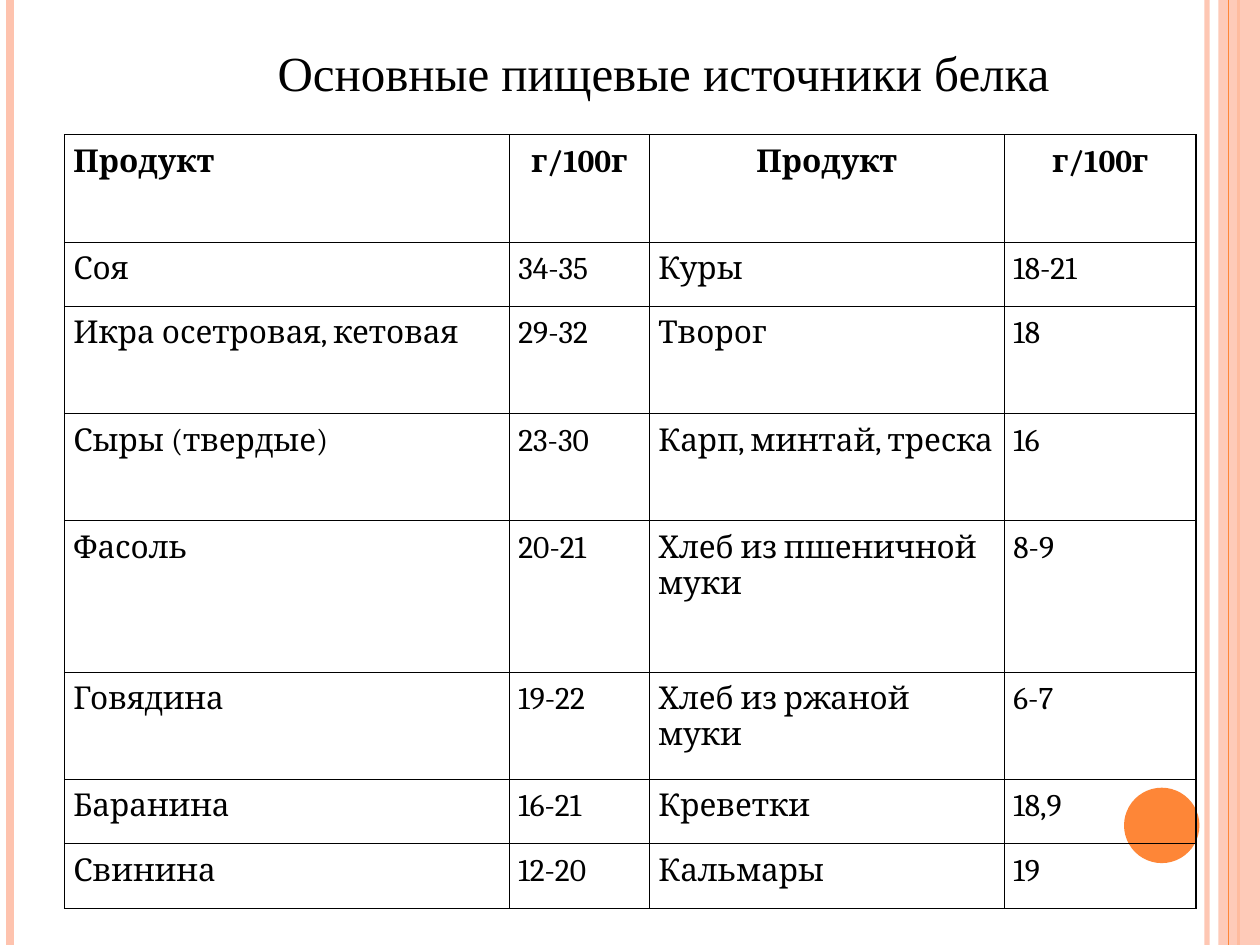
from lxml.etree import SubElement
from pptx import Presentation
from pptx.dml.color import RGBColor
from pptx.enum.shapes import MSO_CONNECTOR as Connector, MSO_SHAPE as Shape
from pptx.enum.text import MSO_AUTO_SIZE as AutoSize, PP_ALIGN as Align
from pptx.oxml.ns import qn
from pptx.util import Cm, Pt

PAGE_WIDTH, PAGE_HEIGHT = 25.4, 19.05
PEACH, ORANGE, BLACK = "FEC3AE", "FE8637", "000000"
COLUMN_WIDTHS = [8.97, 2.82, 7.16, 3.86]
ROW_HEIGHTS = [2.16, 1.3, 2.16, 2.16, 3.05, 2.16, 1.3, 1.3]
ROWS = [
    ("Продукт", "г/100г", "Продукт", "г/100г"),
    ("Соя", "34-35", "Куры", "18-21"),
    ("Икра осетровая, кетовая", "29-32", "Творог", "18"),
    ("Сыры (твердые)", "23-30", "Карп, минтай, треска", "16"),
    ("Фасоль", "20-21", "Хлеб из пшеничной муки", "8-9"),
    ("Говядина", "19-22", "Хлеб из ржаной муки", "6-7"),
    ("Баранина", "16-21", "Креветки", "18,9"),
    ("Свинина", "12-20", "Кальмары", "19"),
]


def paint(color_format, color):
    """Apply a hex colour to a fill or font colour."""
    color_format.rgb = RGBColor.from_string(color)


def set_opacity(shape, percent):
    """Set the opacity of the first colour of a shape."""
    color = shape.element.spPr.find(".//" + qn("a:srgbClr"))
    SubElement(color, qn("a:alpha"), val=str(percent * 1000))


def style_font(font, name, size, bold=False):
    """Give a font its face, size, weight and black colour."""
    font.name, font.size, font.bold = name, Pt(size), bold
    paint(font.color, BLACK)


def add_stripe(page, x, color, width, opacity=100):
    """Draw a vertical line over the full page height."""
    stripe = page.shapes.add_connector(
        Connector.STRAIGHT, Cm(x), Cm(0), Cm(x), Cm(PAGE_HEIGHT))
    stripe.line.width = Pt(width)
    paint(stripe.line.color, color)
    SubElement(stripe.element.spPr, qn("a:effectLst"))
    if opacity < 100:
        set_opacity(stripe, opacity)


def add_plain_shape(page, kind, left, top, width, height, color):
    """Draw a filled shape without outline or shadow."""
    shape = page.shapes.add_shape(kind, Cm(left), Cm(top), Cm(width), Cm(height))
    shape.shadow.inherit = False
    shape.fill.solid()
    paint(shape.fill.fore_color, color)
    shape.line.fill.background()
    return shape


def add_decoration(page):
    """Draw the side stripes, the right band and the circle."""
    add_stripe(page, 24.33, PEACH, 3, 93)
    add_stripe(page, 0.2, PEACH, 4.5)
    add_stripe(page, 24.97, ORANGE, 1.5)
    band = add_plain_shape(
        page, Shape.RECTANGLE, 24.56, 0, PAGE_WIDTH - 24.56, PAGE_HEIGHT, PEACH)
    set_opacity(band, 87)
    add_stripe(page, 24.77, ORANGE, 0.75)
    add_plain_shape(page, Shape.OVAL, 22.66, 15.88, 1.52, 1.52, ORANGE)


def add_borders(cell):
    """Draw thin black borders on all sides of a cell."""
    properties = cell._tc.get_or_add_tcPr()
    for index, side in enumerate(("lnL", "lnR", "lnT", "lnB")):
        border = properties.makeelement(qn("a:" + side), {"w": str(Pt(0.75))})
        properties.insert(index, border)
        fill = SubElement(border, qn("a:solidFill"))
        SubElement(fill, qn("a:srgbClr"), val=BLACK)


def fill_cell(cell, text, alignment, bold):
    """Write and style one table cell."""
    cell.text = text
    cell.margin_left = cell.margin_right = Cm(0.18)
    cell.margin_top = cell.margin_bottom = Cm(0.18)
    cell.fill.background()
    add_borders(cell)
    para = cell.text_frame.paragraphs[0]
    para.alignment = alignment
    style_font(para.font, "Cambria", 18, bold)


def add_protein_table(page, left, top):
    """Build the table of foods and their protein content."""
    table = page.shapes.add_table(
        len(ROWS), len(COLUMN_WIDTHS), Cm(left), Cm(top),
        Cm(sum(COLUMN_WIDTHS)), Cm(sum(ROW_HEIGHTS))).table
    table.first_row = table.horz_banding = False
    for column, width in zip(table.columns, COLUMN_WIDTHS):
        column.width = Cm(width)
    for row, height, texts in zip(table.rows, ROW_HEIGHTS, ROWS):
        row.height = Cm(height)
        header = texts is ROWS[0]
        for index, (cell, text) in enumerate(zip(row.cells, texts)):
            other = Align.CENTER if header else Align.LEFT
            fill_cell(cell, text, other if index else Align.JUSTIFY, header)


def add_title(page, left, top, width, height):
    """Write the centred page title."""
    box = page.shapes.add_textbox(Cm(left), Cm(top), Cm(width), Cm(height))
    frame = box.text_frame
    frame.word_wrap = False
    frame.auto_size = AutoSize.SHAPE_TO_FIT_TEXT
    para = frame.paragraphs[0]
    para.text = "Основные пищевые источники белка"
    para.alignment = Align.CENTER
    style_font(para.font, "Times New Roman", 28)


def main():
    """Build the slide and save it."""
    deck = Presentation()
    deck.slide_width, deck.slide_height = Cm(PAGE_WIDTH), Cm(PAGE_HEIGHT)
    page = deck.slides.add_slide(deck.slide_layouts[6])
    add_decoration(page)
    add_protein_table(page, 1.3, 2.72)
    add_title(page, 5.16, 0.74, 16.43, 1.45)
    deck.save("out.pptx")


if __name__ == "__main__":
    main()
